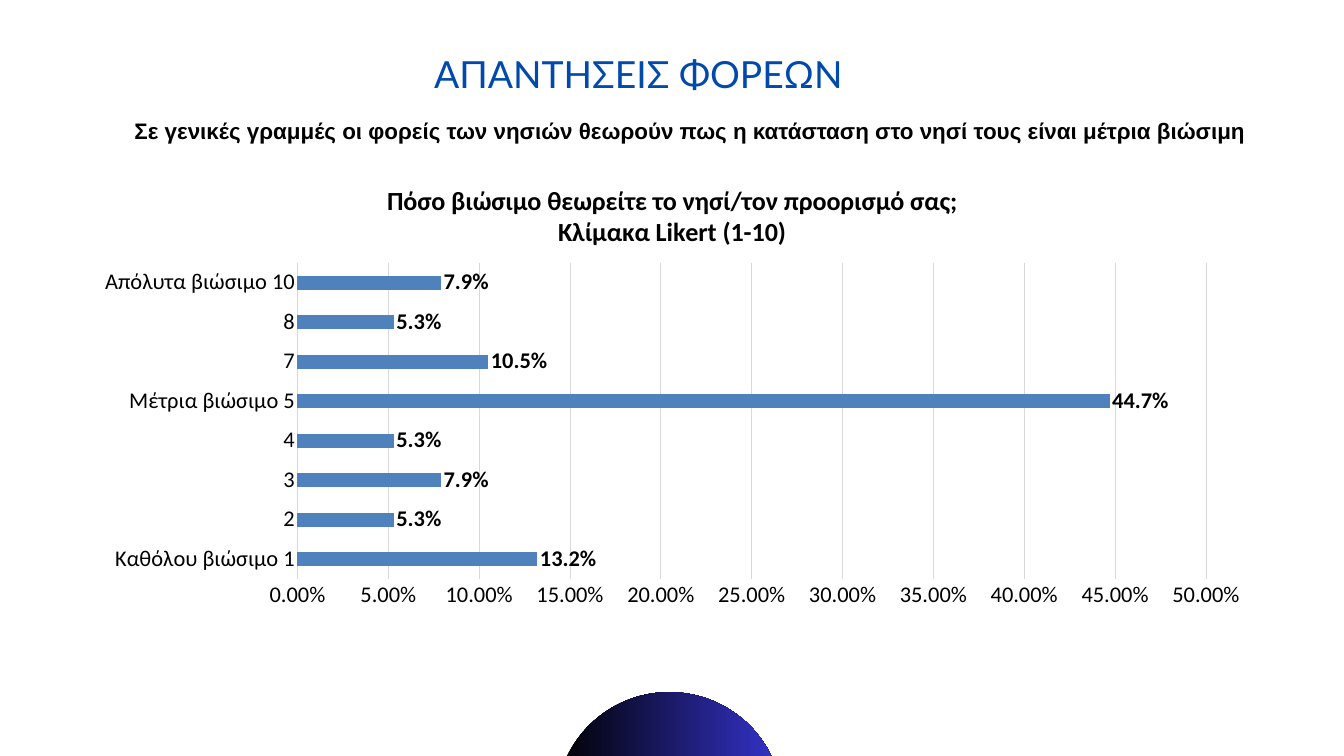
from lxml import etree
from pptx import Presentation
from pptx.chart.data import CategoryChartData
from pptx.dml.color import RGBColor
from pptx.enum.chart import XL_CHART_TYPE, XL_LABEL_POSITION, XL_TICK_MARK
from pptx.enum.shapes import MSO_SHAPE
from pptx.enum.text import MSO_ANCHOR, PP_ALIGN
from pptx.oxml.ns import qn
from pptx.util import Inches, Pt

BAR_CLUSTERED = XL_CHART_TYPE.BAR_CLUSTERED
OUTSIDE_END = XL_LABEL_POSITION.OUTSIDE_END
NO_TICK = XL_TICK_MARK.NONE
OVAL = MSO_SHAPE.OVAL
TOP, MIDDLE = MSO_ANCHOR.TOP, MSO_ANCHOR.MIDDLE
CENTER = PP_ALIGN.CENTER

BLACK = RGBColor(0x00, 0x00, 0x00)
HEADING_BLUE = RGBColor(0x00, 0x4A, 0xAD)
BAR_BLUE = RGBColor(0x4F, 0x81, 0xBD)
GRID_GREY = RGBColor(0xD9, 0xD9, 0xD9)
INDIGO = RGBColor(0x35, 0x33, 0xCD)

ANSWERS = {
    "Καθόλου βιώσιμο 1": 0.132,
    "2": 0.053,
    "3": 0.079,
    "4": 0.053,
    "Μέτρια βιώσιμο 5": 0.447,
    "7": 0.105,
    "8": 0.053,
    "Απόλυτα βιώσιμο 10": 0.079,
}


class SlideBuilder:
    chart_font = "Calibri"
    chart_size = 24

    def __init__(self, slide):
        self.slide = slide

    def style(self, font, name, size, color=BLACK, bold=False):
        font.name = name
        font.size = Pt(size)
        font.bold = bold
        font.color.rgb = color

    def text(self, box, words, font_name, size, color=BLACK, bold=False, anchor=TOP):
        frame = self.slide.shapes.add_textbox(*map(Inches, box)).text_frame
        frame.word_wrap = True
        frame.vertical_anchor = anchor
        paragraph = frame.paragraphs[0]
        paragraph.text = words
        paragraph.alignment = CENTER
        self.style(paragraph.font, font_name, size, color, bold)

    def gradient_circle(self, left, top, diameter, colors):
        circle = self.slide.shapes.add_shape(
            OVAL, Inches(left), Inches(top), Inches(diameter), Inches(diameter))
        circle.shadow.inherit = False
        circle.line.fill.background()
        circle.fill.gradient()
        circle.fill.gradient_angle = 0
        for position, (stop, color) in enumerate(zip(circle.fill.gradient_stops, colors)):
            stop.position = position
            stop.color.rgb = color

    def place_plot(self, chart, **fractions):
        plot_area = chart.plots[0]._element.getparent()
        layout = plot_area.find(qn("c:layout"))
        if layout is None:
            layout = etree.Element(qn("c:layout"))
            plot_area.insert(0, layout)
        manual = etree.SubElement(layout, qn("c:manualLayout"))
        settings = {"layoutTarget": "inner", "xMode": "edge", "yMode": "edge", **fractions}
        for tag, value in settings.items():
            etree.SubElement(manual, qn(f"c:{tag}")).set("val", str(value))

    def bar_chart(self, box, title_lines, answers, maximum, step):
        data = CategoryChartData()
        data.categories = list(answers)
        data.add_series("Series 1", list(answers.values()))
        chart = self.slide.shapes.add_chart(
            BAR_CLUSTERED, *map(Inches, box), data).chart
        self.style(chart.font, self.chart_font, self.chart_size)
        chart.has_legend = False

        chart.has_title = True
        title = chart.chart_title
        title.include_in_layout = False
        title.text_frame.text = "\n".join(title_lines)
        for paragraph in title.text_frame.paragraphs:
            self.style(paragraph.font, self.chart_font, 28, bold=True)

        scale = chart.value_axis
        scale.minimum_scale = 0
        scale.maximum_scale = maximum
        scale.major_unit = step
        scale.tick_labels.number_format = "0.00%"
        scale.tick_labels.number_format_is_linked = False
        scale.format.line.fill.background()
        grid = scale.major_gridlines.format.line
        for line in (grid, chart.category_axis.format.line):
            line.color.rgb = GRID_GREY
            line.width = Pt(0.75)
        for axis in (scale, chart.category_axis):
            axis.major_tick_mark = NO_TICK
            axis.minor_tick_mark = NO_TICK
            self.style(axis.tick_labels.font, self.chart_font, self.chart_size)

        plot = chart.plots[0]
        plot.gap_width = 182
        plot.vary_by_categories = False
        bars = plot.series[0]
        bars.invert_if_negative = False
        bars.format.fill.solid()
        bars.format.fill.fore_color.rgb = BAR_BLUE
        labels = bars.data_labels
        labels.show_value = True
        labels.position = OUTSIDE_END
        labels.number_format = "0.0%"
        labels.number_format_is_linked = False
        self.style(labels.font, self.chart_font, self.chart_size, bold=True)
        self.place_plot(chart, x=0.183, y=0.207, w=0.769, h=0.704)


def main():
    presentation = Presentation()
    presentation.slide_width = Inches(20)
    presentation.slide_height = Inches(11.25)
    builder = SlideBuilder(presentation.slides.add_slide(presentation.slide_layouts[6]))

    builder.text((0.5, 0.47, 18, 1.25), "ΑΠΑΝΤΗΣΕΙΣ ΦΟΡΕΩΝ",
                 "Lato", 40, HEADING_BLUE, anchor=MIDDLE)
    builder.text((0.6, 1.7, 19.33, 0.6),
                 "Σε γενικές γραμμές οι φορείς των νησιών θεωρούν πως "
                 "η κατάσταση στο νησί τους είναι μέτρια βιώσιμη",
                 "Arial", 24, bold=True)
    builder.bar_chart((1.21, 2.53, 17.58, 6.68),
                      ("Πόσο βιώσιμο θεωρείτε το νησί/τον προορισμό σας;",
                       "Κλίμακα Likert (1-10)"),
                      ANSWERS, maximum=0.5, step=0.05)
    builder.gradient_circle(8.27, 10.3, 3.38, (BLACK, INDIGO))
    presentation.save("out.pptx")


if __name__ == "__main__":
    main()
